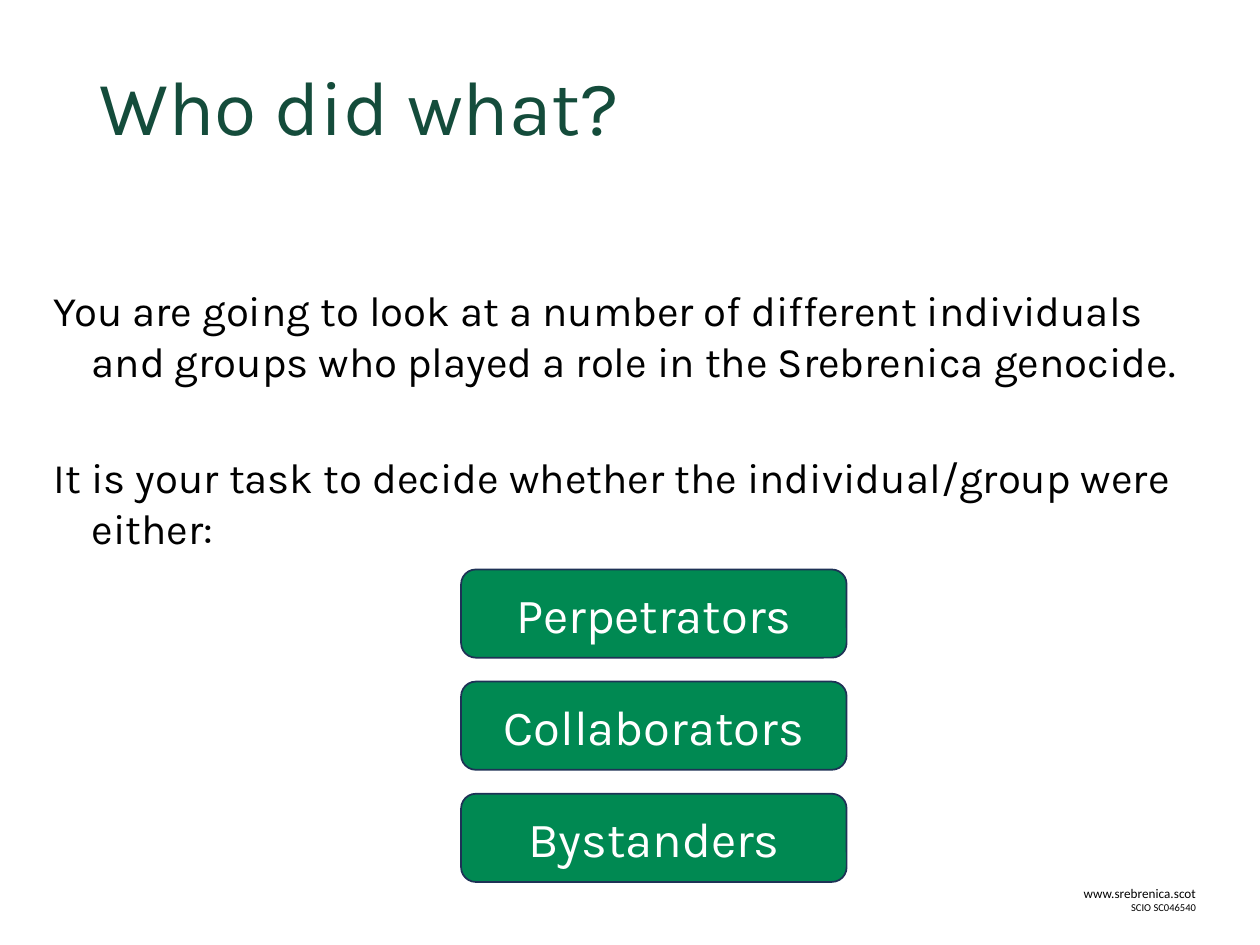
from pptx import Presentation
from pptx.dml.color import RGBColor
from pptx.enum.shapes import MSO_SHAPE
from pptx.enum.text import MSO_ANCHOR, PP_ALIGN
from pptx.util import Inches, Pt

ROUND = MSO_SHAPE.ROUNDED_RECTANGLE
MIDDLE, TOP = MSO_ANCHOR.MIDDLE, MSO_ANCHOR.TOP
LEFT, CENTER, RIGHT = PP_ALIGN.LEFT, PP_ALIGN.CENTER, PP_ALIGN.RIGHT

COLORS = {
    "title": "144C3B",
    "text": "000000",
    "button": "008952",
    "border": "1E3256",
    "label": "FFFFFF",
}
FONT = "Karla"
ROLES = ["Perpetrators", "Collaborators", "Bystanders"]
BODY = [
    "You are going to look at a number of different individuals and groups "
    "who played a role in the Srebrenica genocide.",
    "It is your task to decide whether the individual/group were either:",
]


def color(name):
    return RGBColor.from_string(COLORS[name])


def add_run(para, text, size, tone, font=FONT):
    run = para.add_run()
    run.text = text
    run.font.name = font
    run.font.size = Pt(size)
    run.font.color.rgb = color(tone)


def add_box(slide, left, top, width, height, anchor=TOP):
    box = slide.shapes.add_textbox(
        Inches(left), Inches(top), Inches(width), Inches(height))
    frame = box.text_frame
    frame.word_wrap = True
    frame.vertical_anchor = anchor
    return frame


def add_para(frame, first, align=LEFT):
    para = frame.paragraphs[0] if first else frame.add_paragraph()
    para.alignment = align
    return para


def add_title(slide):
    frame = add_box(slide, 0.69, 0.15, 8.62, 1.45, MIDDLE)
    para = add_para(frame, True)
    para.line_spacing = 0.9
    add_run(para, "Who did what?", 44, "title")


def add_body(slide):
    frame = add_box(slide, 0.33, 2.21, 9.33, 2.3)
    for i, text in enumerate(BODY):
        para = add_para(frame, i == 0)
        props = para._p.get_or_add_pPr()
        props.set("marL", str(Inches(0.3)))
        props.set("indent", str(Inches(-0.3)))
        if i:
            para.space_before = Pt(38)
        add_run(para, text, 24, "text")


def add_button(slide, top, text):
    shape = slide.shapes.add_shape(
        ROUND, Inches(3.66), Inches(top), Inches(3.06), Inches(0.7))
    shape.shadow.inherit = False
    shape.fill.solid()
    shape.fill.fore_color.rgb = color("button")
    shape.line.color.rgb = color("border")
    shape.line.width = Pt(1)
    shape.text_frame.vertical_anchor = MIDDLE
    add_run(add_para(shape.text_frame, True, CENTER), text, 28, "label")


def add_footer(slide):
    frame = add_box(slide, 7.06, 6.98, 2.53, 0.4)
    lines = [("www.srebrenica.scot", 7.5), ("SCIO SC046540", 6)]
    for i, (text, size) in enumerate(lines):
        add_run(add_para(frame, i == 0, RIGHT), text, size, "text", "Calibri")


def main():
    deck = Presentation()
    deck.slide_width = Inches(10)
    deck.slide_height = Inches(7.5)
    slide = deck.slides.add_slide(deck.slide_layouts[6])
    add_footer(slide)
    add_title(slide)
    add_body(slide)
    for i, role in enumerate(ROLES):
        add_button(slide, 4.52 + 0.89 * i, role)
    deck.save("out.pptx")


if __name__ == "__main__":
    main()
